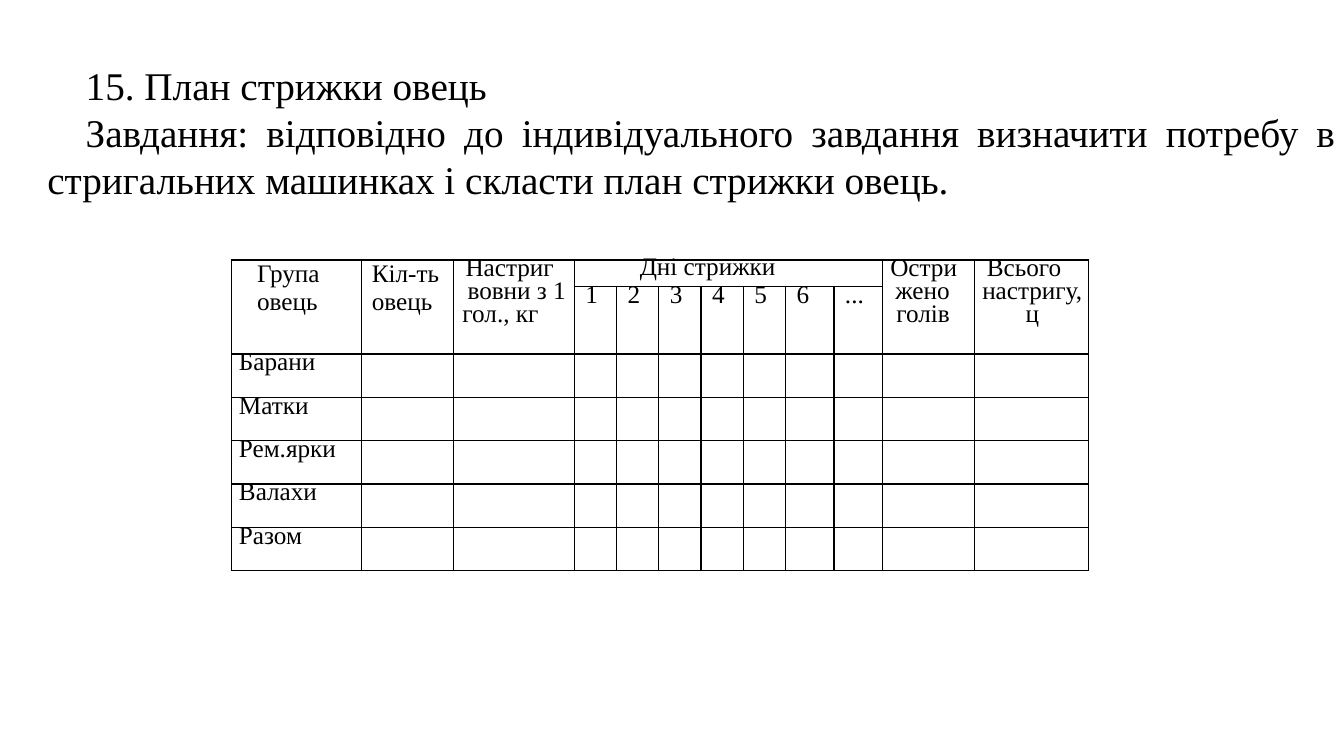
from dataclasses import dataclass

from lxml.etree import SubElement
from pptx import Presentation
from pptx.dml.color import RGBColor
from pptx.enum.text import MSO_ANCHOR, MSO_AUTO_SIZE, PP_ALIGN
from pptx.oxml.ns import qn
from pptx.util import Inches, Pt


@dataclass(frozen=True)
class Theme:
    font: str = "Times New Roman"
    ink: str = "000000"
    heading_size: int = 28
    table_size: int = 18
    border_width: int = 1
    first_line: float = 15.9
    next_line: float = 16.1


THEME = Theme()

HEADING = [
    "15. План стрижки овець",
    "Завдання: відповідно до індивідуального завдання визначити потребу в "
    "стригальних машинках і скласти план стрижки овець.",
]
COLUMN_WIDTHS = [1.29, 0.91, 1.2] + [0.42] * 5 + [0.48] * 2 + [0.92, 1.13]
ROW_HEIGHTS = [0.26, 0.67] + [0.43] * 5
DAYS = ["1", "2", "3", "4", "5", "6", "..."]
SHEEP_GROUPS = ["Барани", "Матки", "Рем.ярки", "Валахи", "Разом"]
FIRST_DAY = 3
LAST_DAY = FIRST_DAY + len(DAYS) - 1

TALL_HEADERS = {
    0: [("Група овець", 0.25, 0, None)],
    1: [("Кіл-ть овець", 0.1, 0, None)],
    2: [("Настриг", 0.14, -0.02, THEME.first_line),
        ("вовни з 1 гол., кг", 0.09, 0.05, THEME.next_line)],
    10: [("Остри", 0.13, -0.05, THEME.first_line),
         ("жено голів", 0.14, -0.01, THEME.next_line)],
    11: [("Всього", 0.01, 0.11, THEME.first_line),
         ("настригу, ц", 0.01, 0, THEME.next_line)],
}


def indent(paragraph, left, first):
    properties = paragraph._p.get_or_add_pPr()
    properties.set("marL", str(Inches(left)))
    properties.set("indent", str(Inches(first)))


def style(paragraph, size):
    for run in paragraph.runs:
        run.font.name = THEME.font
        run.font.size = Pt(size)
        run.font.color.rgb = RGBColor.from_string(THEME.ink)


def fill_cell(cell, lines):
    frame = cell.text_frame
    frame.text = "\n".join(text for text, *_ in lines)
    for number, (paragraph, line) in enumerate(zip(frame.paragraphs, lines)):
        _, left, first, spacing = line
        indent(paragraph, left, first)
        if spacing:
            paragraph.line_spacing = Pt(spacing)
        if number:
            paragraph.space_before = Pt(0.2)
        style(paragraph, THEME.table_size)


def clear_cell(cell):
    cell.margin_left = cell.margin_right = 0
    cell.margin_top = cell.margin_bottom = 0
    properties = cell._tc.get_or_add_tcPr()
    for side in ("a:lnL", "a:lnR", "a:lnT", "a:lnB"):
        border = SubElement(properties, qn(side), w=str(Pt(THEME.border_width)))
        ink = SubElement(border, qn("a:solidFill"))
        SubElement(ink, qn("a:srgbClr"), val=THEME.ink)
    cell.fill.background()


def add_heading(slide, left, top, width, height):
    heading = slide.shapes.title
    heading.left, heading.top = Inches(left), Inches(top)
    heading.width, heading.height = Inches(width), Inches(height)
    frame = heading.text_frame
    frame.text = "\n".join(HEADING)
    frame.word_wrap = True
    frame.auto_size = MSO_AUTO_SIZE.SHAPE_TO_FIT_TEXT
    frame.vertical_anchor = MSO_ANCHOR.MIDDLE
    for paragraph in frame.paragraphs:
        paragraph.alignment = PP_ALIGN.JUSTIFY
        indent(paragraph, 0, 0.38)
        style(paragraph, THEME.heading_size)


def add_shearing_plan(slide, left, top, width, height):
    plan = slide.shapes.add_table(
        len(ROW_HEIGHTS), len(COLUMN_WIDTHS),
        Inches(left), Inches(top), Inches(width), Inches(height)).table
    plan.first_row = plan.horz_banding = False
    for column, share in zip(plan.columns, COLUMN_WIDTHS):
        column.width = Inches(width * share / sum(COLUMN_WIDTHS))
    for row, share in zip(plan.rows, ROW_HEIGHTS):
        row.height = Inches(height * share / sum(ROW_HEIGHTS))
    for cell in plan.iter_cells():
        clear_cell(cell)

    for column, lines in TALL_HEADERS.items():
        plan.cell(0, column).merge(plan.cell(1, column))
        fill_cell(plan.cell(0, column), lines)
    total_header = plan.cell(0, len(COLUMN_WIDTHS) - 1)
    total_header.text_frame.paragraphs[1].alignment = PP_ALIGN.CENTER

    plan.cell(0, FIRST_DAY).merge(plan.cell(0, LAST_DAY))
    fill_cell(plan.cell(0, FIRST_DAY), [("Дні стрижки", 0.65, 0, 15.1)])
    for column, day in enumerate(DAYS, FIRST_DAY):
        fill_cell(plan.cell(1, column), [(day, 0.11, 0, THEME.first_line)])
    for row, group in enumerate(SHEEP_GROUPS, 2):
        fill_cell(plan.cell(row, 0), [(group, 0.07, 0, THEME.first_line)])


def main():
    presentation = Presentation()
    presentation.slide_width = Inches(13.33)
    presentation.slide_height = Inches(7.5)
    slide = presentation.slides.add_slide(presentation.slide_layouts[5])
    add_shearing_plan(slide, 2.3, 2.58, 8.5, 3.08)
    add_heading(slide, 0.37, 0.55, 12.97, 1.51)
    presentation.save("out.pptx")


if __name__ == "__main__":
    main()
